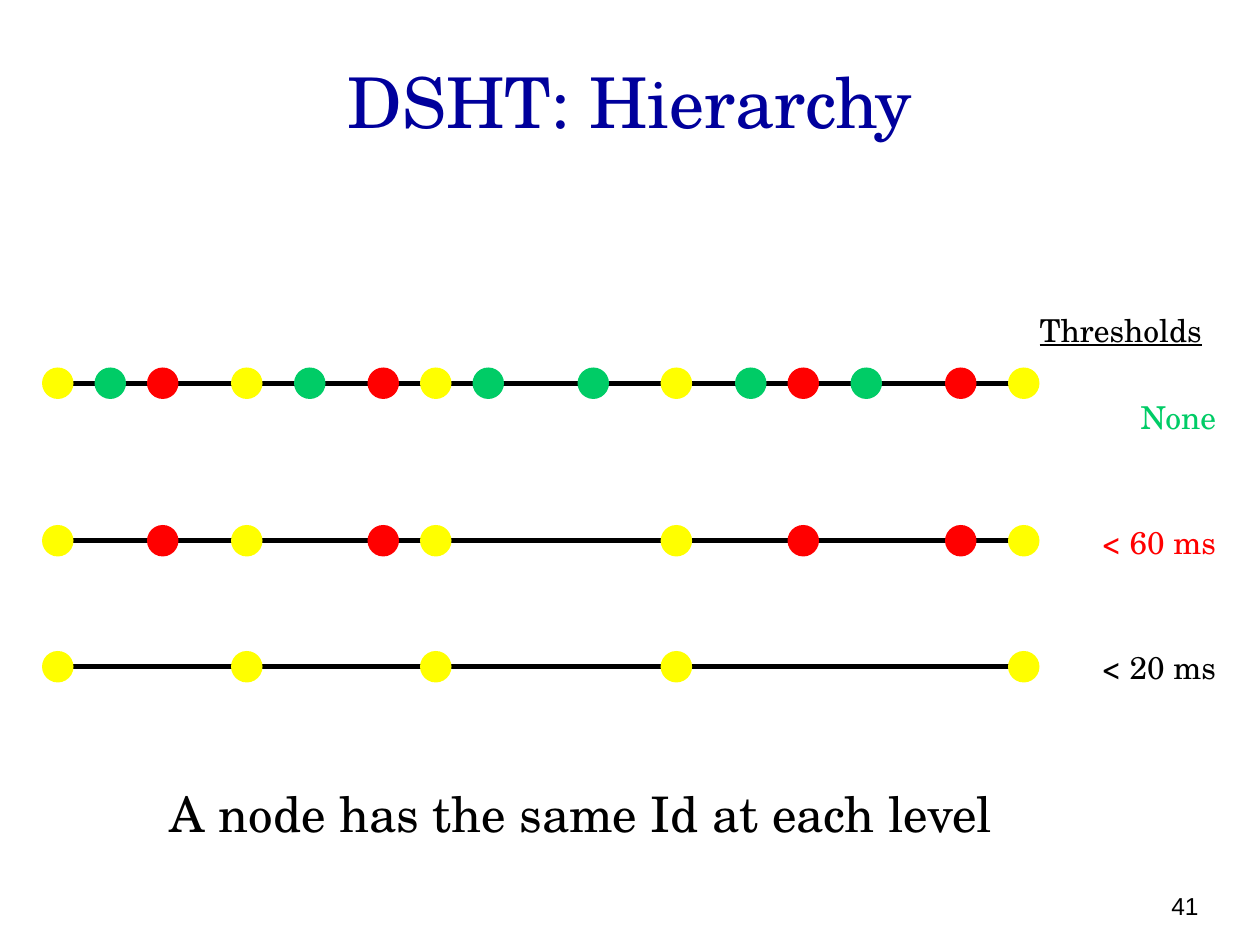
from pptx import Presentation
from pptx.dml.color import RGBColor
from pptx.enum.shapes import MSO_CONNECTOR, MSO_SHAPE
from pptx.enum.text import MSO_ANCHOR, PP_ALIGN
from pptx.oxml.ns import qn
from pptx.util import Pt
from lxml import etree

LEFT, CENTER, RIGHT = PP_ALIGN.LEFT, PP_ALIGN.CENTER, PP_ALIGN.RIGHT
TOP, MIDDLE, BOTTOM = MSO_ANCHOR.TOP, MSO_ANCHOR.MIDDLE, MSO_ANCHOR.BOTTOM
STRAIGHT, OVAL = MSO_CONNECTOR.STRAIGHT, MSO_SHAPE.OVAL

THEME = {
    "font": "TeX Gyre Schola", "number_font": "Arial",
    "title": 40, "note": 28, "label": 18, "number": 14,
    "navy": "00009C", "black": "000000",
    "yellow": "FFFF00", "red": "FF0000", "green": "00CC66",
}

TITLE = "DSHT: Hierarchy"
HEADING = "Thresholds"
NOTE = "A node has the same Id at each level"
NUMBER = "41"
THRESHOLDS = [("None", "green"), ("< 60 ms", "red"), ("< 20 ms", "black")]
NODES = {
    "yellow": [24, 132, 240, 377.5, 576],
    "red": [84, 210, 450, 540],
    "green": [54, 168, 270, 330, 420, 486],
}
LEVELS = [
    (372, ["yellow"]),
    (300, ["yellow", "red"]),
    (210, ["yellow", "red", "green"]),
]
NODE_SIZE = 18
LINE_START, LINE_END, LINE_WIDTH = 31, 585, 3
LABEL_GAP = 47.5


def color(name):
    return RGBColor.from_string(THEME[name])


def add_level(s, top, kinds):
    y = top + NODE_SIZE / 2
    line = s.shapes.add_connector(STRAIGHT, Pt(LINE_START), Pt(y), Pt(LINE_END), Pt(y))
    line.line.width = Pt(LINE_WIDTH)
    line.line.color.rgb = color("black")
    etree.SubElement(line._element.spPr, qn("a:effectLst"))
    for kind in kinds:
        for x in NODES[kind]:
            node = s.shapes.add_shape(OVAL, Pt(x), Pt(top), Pt(NODE_SIZE), Pt(NODE_SIZE))
            node.shadow.inherit = False
            node.fill.solid()
            node.fill.fore_color.rgb = color(kind)
            node.line.fill.background()


def write(sp, lines, box, size, align=LEFT, anchor=TOP, font="font",
          wrap=True, underline=None, spacing=None, gap=0):
    sp.left, sp.top, sp.width, sp.height = map(Pt, box)
    tf = sp.text_frame
    tf.word_wrap, tf.vertical_anchor = wrap, anchor
    for i, (text, tint) in enumerate(lines):
        p = tf.add_paragraph() if i else tf.paragraphs[0]
        p.alignment, p.line_spacing = align, spacing
        p.space_before = Pt(gap if i else 0)
        r = p.add_run()
        r.text = text
        formats = {"name": THEME[font], "size": Pt(THEME[size]), "underline": underline}
        for key, value in formats.items():
            setattr(r.font, key, value)
        r.font.color.rgb = color(tint)


def add_text(s, lines, box, size, **formats):
    write(s.shapes.add_textbox(*map(Pt, box)), lines, box, size, **formats)


def main():
    prs = Presentation()
    prs.slide_width, prs.slide_height = Pt(720), Pt(540)
    s = prs.slides.add_slide(prs.slide_layouts[5])
    write(s.shapes.title, [(TITLE, "navy")], (36, 23, 648, 68.5), "title",
          align=CENTER, anchor=MIDDLE)
    for top, kinds in LEVELS:
        add_level(s, top, kinds)
    add_text(s, THRESHOLDS, (606, 222, 96, 175), "label",
             align=RIGHT, spacing=1.1, gap=LABEL_GAP)
    add_text(s, [(HEADING, "black")], (587, 174, 133, 36), "label",
             wrap=False, underline=True)
    add_text(s, [(NOTE, "black")], (90, 444, 492, 41), "note")
    add_text(s, [(NUMBER, "black")], (524, 492, 168, 37.5), "number",
             align=RIGHT, anchor=BOTTOM, font="number_font")
    prs.save("out.pptx")


if __name__ == "__main__":
    main()
